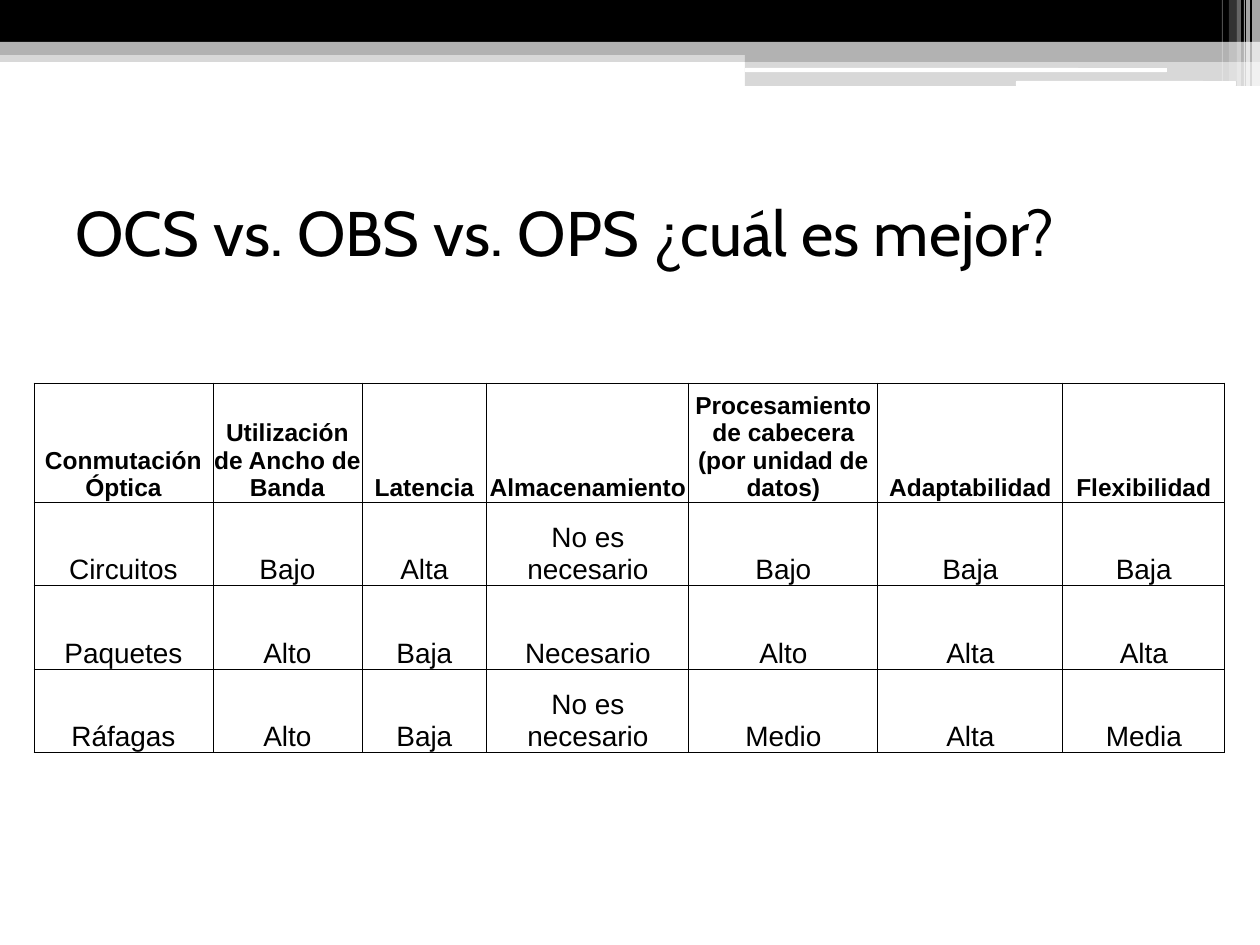
from lxml.etree import SubElement
from pptx import Presentation
from pptx.dml.color import RGBColor
from pptx.enum.shapes import MSO_SHAPE
from pptx.enum.text import MSO_ANCHOR, PP_ALIGN
from pptx.oxml.ns import qn
from pptx.util import Pt

PX = 914400 / 126
COLORS = {"black": "000000", "gray": "B2B2B2", "white": "FFFFFF"}


def px(length):
    return round(length * PX)


def add_run(paragraph, text, font, size, bold=False):
    run = paragraph.add_run()
    run.text = text
    run.font.name = font
    run.font.size = Pt(size)
    run.font.bold = bold
    run.font.color.rgb = RGBColor.from_string(COLORS["black"])


prs = Presentation()
prs.slide_width, prs.slide_height = px(1260), px(945)
slide = prs.slides.add_slide(prs.slide_layouts[6])

# Header bands: left, top, width, height, colour, opacity in percent, outline
RECT, ROUND = MSO_SHAPE.RECTANGLE, MSO_SHAPE.ROUNDED_RECTANGLE
bands = [
    (0, 50, 1260, 12, "gray", 50, RECT),
    (0, 0, 1260, 43, "black", 100, RECT),
    (0, 42, 1260, 13, "gray", 100, RECT),
    (745, 49, 515, 13, "gray", 100, RECT),
    (745, 61, 515, 25, "gray", 50, RECT),
    (745, 68, 422, 4, "white", 100, ROUND),
    (1016, 81, 220, 5, "white", 100, ROUND),
    (1252, 0, 8, 86, "white", 65, RECT),
    (1246, 0, 4, 86, "white", 65, RECT),
    (1244, 0, 1, 86, "white", 60, RECT),
    (1237, 0, 4, 86, "white", 40, RECT),
    (1229, 0, 8, 81, "white", 20, RECT),
    (1222, 0, 1, 81, "white", 30, RECT),
]
for left, top, width, height, color, opacity, outline in bands:
    band = slide.shapes.add_shape(outline, px(left), px(top), px(width), px(height))
    band.shadow.inherit = False
    band.line.fill.background()
    band.fill.solid()
    band.fill.fore_color.rgb = RGBColor.from_string(COLORS[color])
    if opacity < 100:
        tint = band.fill._xPr.find(".//" + qn("a:srgbClr"))
        SubElement(tint, qn("a:alpha"), val=str(opacity * 1000))

title = slide.shapes.add_textbox(px(63), px(158), px(1134), px(147)).text_frame
title.word_wrap = True
title.vertical_anchor = MSO_ANCHOR.MIDDLE
add_run(title.paragraphs[0], "OCS vs. OBS vs. OPS ¿cuál es mejor?", "Cabin", 36)

comparison = [
    ["Conmutación Óptica", "Utilización de Ancho de Banda", "Latencia", "Almacenamiento",
     "Procesamiento de cabecera (por unidad de datos)", "Adaptabilidad", "Flexibilidad"],
    ["Circuitos", "Bajo", "Alta", "No es necesario", "Bajo", "Baja", "Baja"],
    ["Paquetes", "Alto", "Baja", "Necesario", "Alto", "Alta", "Alta"],
    ["Ráfagas", "Alto", "Baja", "No es necesario", "Medio", "Alta", "Media"],
]
column_widths = [179, 149, 125, 202, 189, 185, 162]
row_heights = [119, 83, 84, 83]
table = slide.shapes.add_table(
    len(row_heights), len(column_widths), px(34), px(383),
    px(sum(column_widths)), px(sum(row_heights))).table
table.first_row = table.horz_banding = False
for column, width in zip(table.columns, column_widths):
    column.width = px(width)
for row, height in zip(table.rows, row_heights):
    row.height = px(height)

for r, values in enumerate(comparison):
    for c, value in enumerate(values):
        cell = table.cell(r, c)
        cell.margin_left = cell.margin_right = cell.margin_top = px(1)
        cell.margin_bottom = 0
        cell.vertical_anchor = MSO_ANCHOR.BOTTOM
        paragraph = cell.text_frame.paragraphs[0]
        paragraph.alignment = PP_ALIGN.CENTER
        add_run(paragraph, value, "Arial", 14 if r == 0 else 16, bold=r == 0)
        properties = cell._tc.get_or_add_tcPr()
        for side in ("a:lnL", "a:lnR", "a:lnT", "a:lnB"):
            border = SubElement(properties, qn(side), w=str(Pt(0.5)))
            ink = SubElement(border, qn("a:solidFill"))
            SubElement(ink, qn("a:srgbClr"), val=COLORS["black"])
        cell.fill.background()

prs.save("out.pptx")
